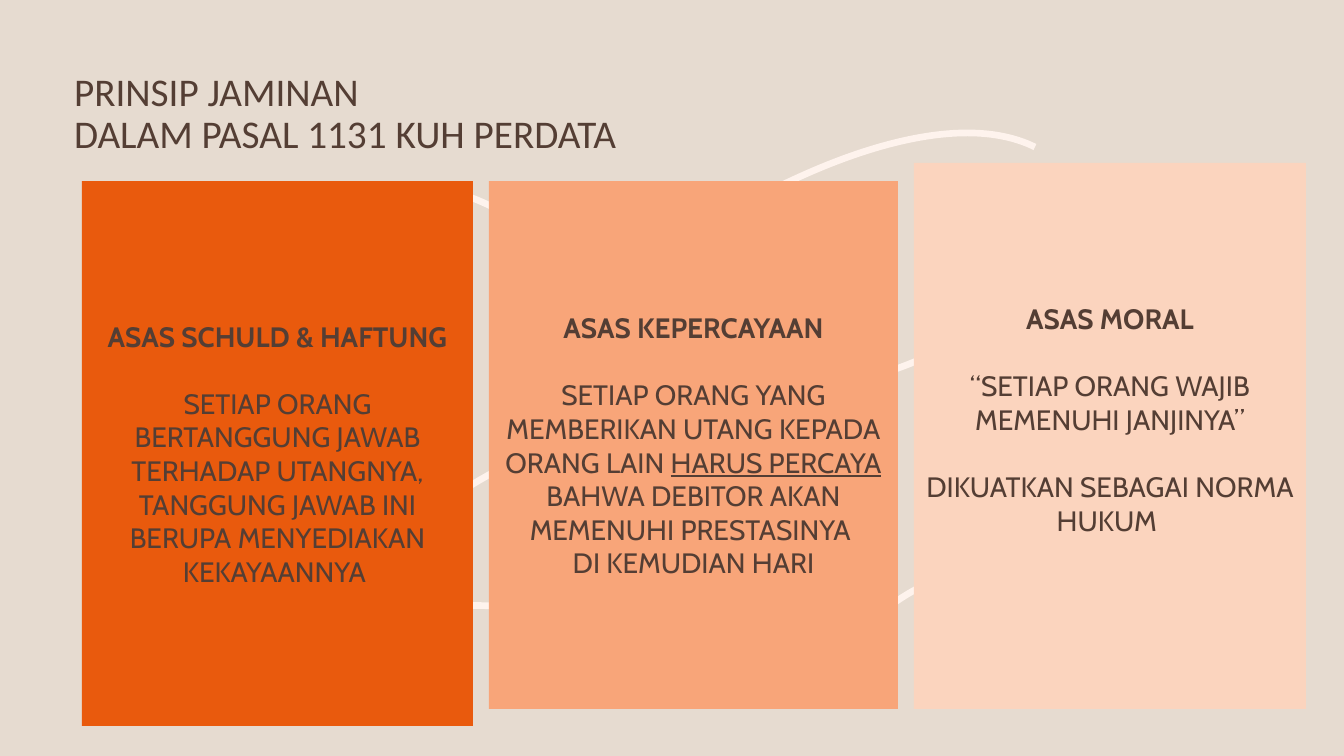
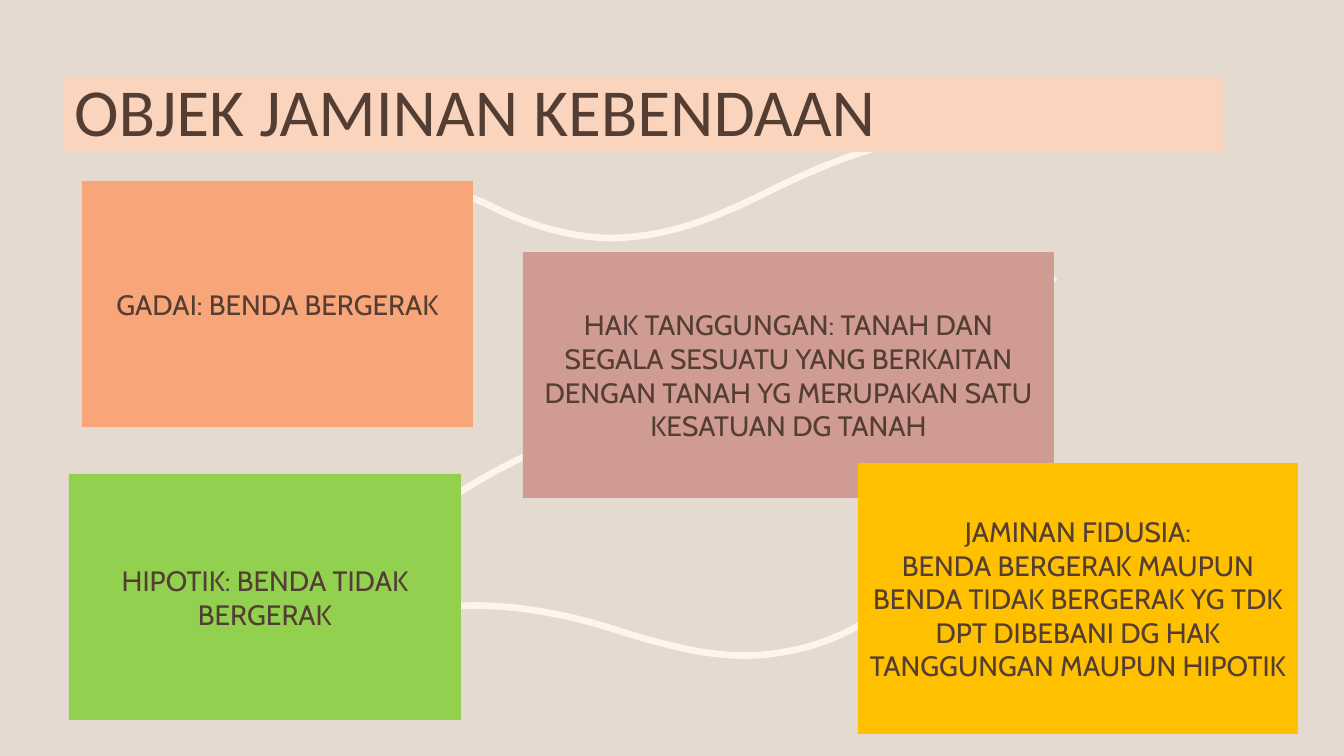
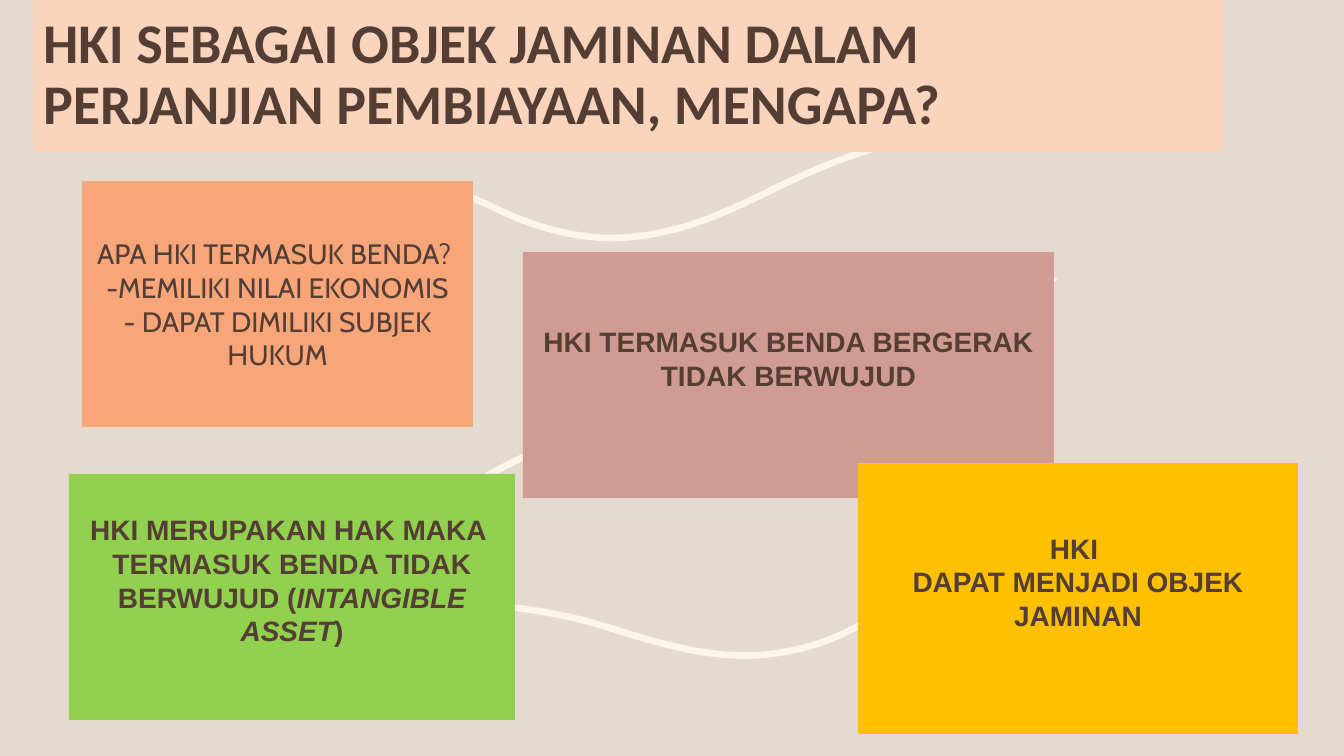
from dataclasses import dataclass

from lxml.etree import SubElement
from pptx import Presentation
from pptx.dml.color import RGBColor
from pptx.enum.shapes import MSO_SHAPE
from pptx.enum.text import MSO_ANCHOR, MSO_AUTO_SIZE, PP_ALIGN
from pptx.oxml.ns import qn
from pptx.util import Pt

EMU_PER_PX = 914400 / 100.8


@dataclass(frozen=True)
class Theme:
    """Colours, fonts and type sizes shared by all slides."""
    ground: str = "E5DACF"
    light_ground: str = "E6DBD0"
    ink: str = "543E34"
    curve: str = "FEF3ED"
    orange: str = "E95A0D"
    apricot: str = "F8A579"
    peach: str = "FBD4BE"
    rose: str = "CF9B92"
    gold: str = "FFC000"
    green: str = "92D050"
    title_font: str = "Calibri"
    body_font: str = "Cabin"
    strong_font: str = "Arial"
    body_size: int = 20
    body_leading: int = 24
    curve_width: float = 4.75


@dataclass(frozen=True)
class Line:
    """A card paragraph: (text, style letters) pairs and an optional gap above."""
    pieces: tuple
    gap: bool = False


THEME = Theme()

CURVES = [
    [(840, 386), (920, 366), (993, 330), (1055, 277)],
    [(589, 431), (513, 456), (449, 494), (392, 543)],
    [(309, 225), (353, 188), (401, 178), (453, 192), (470, 196), (485, 203),
     (501, 211), (534, 226), (570, 237), (609, 238), (642, 238), (675, 231),
     (707, 219), (743, 205), (763, 194), (784, 184), (810, 172), (948, 104),
     (1035, 147)],
    [(927, 584), (911, 591), (898, 600), (884, 610), (855, 630), (822, 646),
     (784, 652), (752, 658), (720, 656), (686, 649), (650, 641), (629, 634),
     (607, 627), (583, 620), (437, 575), (350, 641)],
]


def px(length):
    """Turn a length in px into EMU."""
    return round(length * EMU_PER_PX)


def rgb(code):
    """Turn a hex code into a colour."""
    return RGBColor.from_string(code)


def plain(text, gap=False):
    """Return a line in regular type."""
    return Line(((text, ""),), gap)


def bold(text):
    """Return a line in bold type."""
    return Line(((text, "b"),))


def set_type(run, font, size, style=""):
    """Give a run its font, size, colour and style letters."""
    run.font.name = font
    run.font.size = Pt(size)
    run.font.color.rgb = rgb(THEME.ink)
    run.font.bold = "b" in style
    run.font.italic = "i" in style
    run.font.underline = "u" in style


def paint_ground(page, color):
    """Fill the background of a slide or layout."""
    page.background.fill.solid()
    page.background.fill.fore_color.rgb = rgb(color)


def bend(outline):
    """Turn each three straight segments of a path into one cubic Bézier."""
    segments = outline.findall(qn("a:lnTo"))
    for first in range(0, len(segments), 3):
        cubic = SubElement(outline, qn("a:cubicBezTo"))
        for segment in segments[first:first + 3]:
            cubic.append(segment[0])
            outline.remove(segment)


def decorate_layout(slide):
    """Put the ground colour and the curves on the layout of a slide."""
    layout = slide.slide_layout
    paint_ground(layout, THEME.ground)
    for number, (start, *controls) in enumerate(CURVES, 20):
        builder = slide.shapes.build_freeform(*start, scale=EMU_PER_PX)
        builder.add_line_segments(controls, close=False)
        curve = builder.convert_to_shape()
        bend(next(curve.element.iter(qn("a:path"))))
        curve.shadow.inherit = False
        curve.fill.background()
        curve.line.color.rgb = rgb(THEME.curve)
        curve.line.width = Pt(THEME.curve_width)
        curve.element.nvSpPr.cNvPr.id = number
        layout.shapes.element.append(curve.element)


def place_title(slide, box, text, size, style="", band=None):
    """Move, fill and format the title placeholder."""
    title = slide.shapes.title
    title.left, title.top, title.width, title.height = map(px, box)
    if band:
        title.fill.solid()
        title.fill.fore_color.rgb = rgb(band)
    frame = title.text_frame
    frame.text = text
    frame.word_wrap = True
    frame.auto_size = MSO_AUTO_SIZE.NONE
    frame.vertical_anchor = MSO_ANCHOR.MIDDLE
    frame.margin_right = px(20)
    for paragraph in frame.paragraphs:
        paragraph.alignment = PP_ALIGN.LEFT
        paragraph.line_spacing = 0.9
        for run in paragraph.runs:
            set_type(run, THEME.title_font, size, style)


def place_card(slide, box, color, lines, font=THEME.body_font, raised=False):
    """Draw a coloured card with centred lines, raised by half a line if asked."""
    card = slide.shapes.add_shape(MSO_SHAPE.RECTANGLE, *map(px, box))
    card.shadow.inherit = False
    card.fill.solid()
    card.fill.fore_color.rgb = rgb(color)
    card.line.fill.background()
    frame = card.text_frame
    frame.word_wrap = True
    frame.vertical_anchor = MSO_ANCHOR.MIDDLE
    frame.margin_left = frame.margin_right = px(10)
    frame.margin_top = px(5)
    frame.margin_bottom = px(5) + (Pt(THEME.body_leading) if raised else 0)
    for index, line in enumerate(lines):
        paragraph = frame.add_paragraph() if index else frame.paragraphs[0]
        paragraph.alignment = PP_ALIGN.CENTER
        paragraph.line_spacing = Pt(THEME.body_leading)
        paragraph.space_before = Pt(THEME.body_leading if line.gap else 0)
        for text, style in line.pieces:
            run = paragraph.add_run()
            run.text = text
            set_type(run, font, THEME.body_size, style)


def build_principles(slide):
    """Build the slide with three principles side by side."""
    paint_ground(slide, THEME.light_ground)
    place_title(slide, (64, 77, 1008, 75),
                "PRINSIP JAMINAN\nDALAM PASAL 1131 KUH PERDATA", 28)
    place_card(slide, (82, 181, 391, 545), THEME.orange, [
        bold("ASAS SCHULD & HAFTUNG"),
        plain("SETIAP ORANG BERTANGGUNG JAWAB TERHADAP UTANGNYA, "
              "TANGGUNG JAWAB INI BERUPA MENYEDIAKAN KEKAYAANNYA ", gap=True),
    ])
    place_card(slide, (489, 181, 409, 528), THEME.apricot, [
        bold("ASAS KEPERCAYAAN"),
        Line((("SETIAP ORANG YANG MEMBERIKAN UTANG KEPADA ORANG LAIN ", ""),
              ("HARUS PERCAYA ", "u"),
              ("BAHWA DEBITOR AKAN MEMENUHI PRESTASINYA ", "")), gap=True),
        plain("DI KEMUDIAN HARI"),
    ])
    place_card(slide, (914, 163, 392, 546), THEME.peach, [
        bold("ASAS MORAL"),
        plain("“SETIAP ORANG WAJIB MEMENUHI JANJINYA”", gap=True),
        plain("DIKUATKAN SEBAGAI NORMA HUKUM ", gap=True),
    ], raised=True)


def place_four_cards(slide, contents, green_width, strong=False):
    """Place four cards; strong sets all but the first in the strong font."""
    places = [
        ((82, 181, 391, 246), THEME.apricot),
        ((523, 252, 531, 246), THEME.rose),
        ((858, 463, 440, 271), THEME.gold),
        ((69, 474, green_width, 246), THEME.green),
    ]
    for index, ((box, color), lines) in enumerate(zip(places, contents)):
        marked = strong and index > 0
        font = THEME.strong_font if marked else THEME.body_font
        place_card(slide, box, color, lines, font, raised=marked)


def build_objects(slide):
    """Build the slide on the objects of each security right."""
    place_title(slide, (64, 77, 1159, 75), "OBJEK JAMINAN KEBENDAAN", 48,
                band=THEME.peach)
    place_four_cards(slide, [
        [plain("GADAI: BENDA BERGERAK")],
        [plain("HAK TANGGUNGAN: TANAH DAN SEGALA SESUATU YANG BERKAITAN "
               "DENGAN TANAH YG MERUPAKAN SATU KESATUAN DG TANAH")],
        [plain("JAMINAN FIDUSIA:"),
         plain("BENDA BERGERAK MAUPUN BENDA TIDAK BERGERAK YG TDK DPT "
               "DIBEBANI DG HAK TANGGUNGAN MAUPUN HIPOTIK")],
        [plain("HIPOTIK: BENDA TIDAK BERGERAK")],
    ], green_width=392)


def build_intellectual_property(slide):
    """Build the slide on intellectual property as collateral."""
    place_title(slide, (33, 0, 1190, 152),
                "HKI SEBAGAI OBJEK JAMINAN DALAM PERJANJIAN PEMBIAYAAN, "
                "MENGAPA?", 40, "b", THEME.peach)
    place_four_cards(slide, [
        [plain("APA HKI TERMASUK BENDA? "),
         plain("-MEMILIKI NILAI EKONOMIS"),
         plain("- DAPAT DIMILIKI SUBJEK HUKUM")],
        [bold("HKI TERMASUK BENDA BERGERAK TIDAK BERWUJUD")],
        [bold("HKI "), bold("DAPAT MENJADI OBJEK JAMINAN")],
        [bold("HKI MERUPAKAN HAK MAKA "),
         Line((("TERMASUK BENDA TIDAK BERWUJUD (", "b"),
               ("INTANGIBLE ASSET", "bi"), (")", "b")))],
    ], green_width=446, strong=True)


def main():
    """Build the deck and save it."""
    deck = Presentation()
    deck.slide_width, deck.slide_height = px(1344), px(756)
    title_only = deck.slide_layouts[5]
    builders = (build_principles, build_objects, build_intellectual_property)
    slides = [deck.slides.add_slide(title_only) for _ in builders]
    decorate_layout(slides[0])
    for build, slide in zip(builders, slides):
        build(slide)
    deck.save("out.pptx")


if __name__ == "__main__":
    main()
